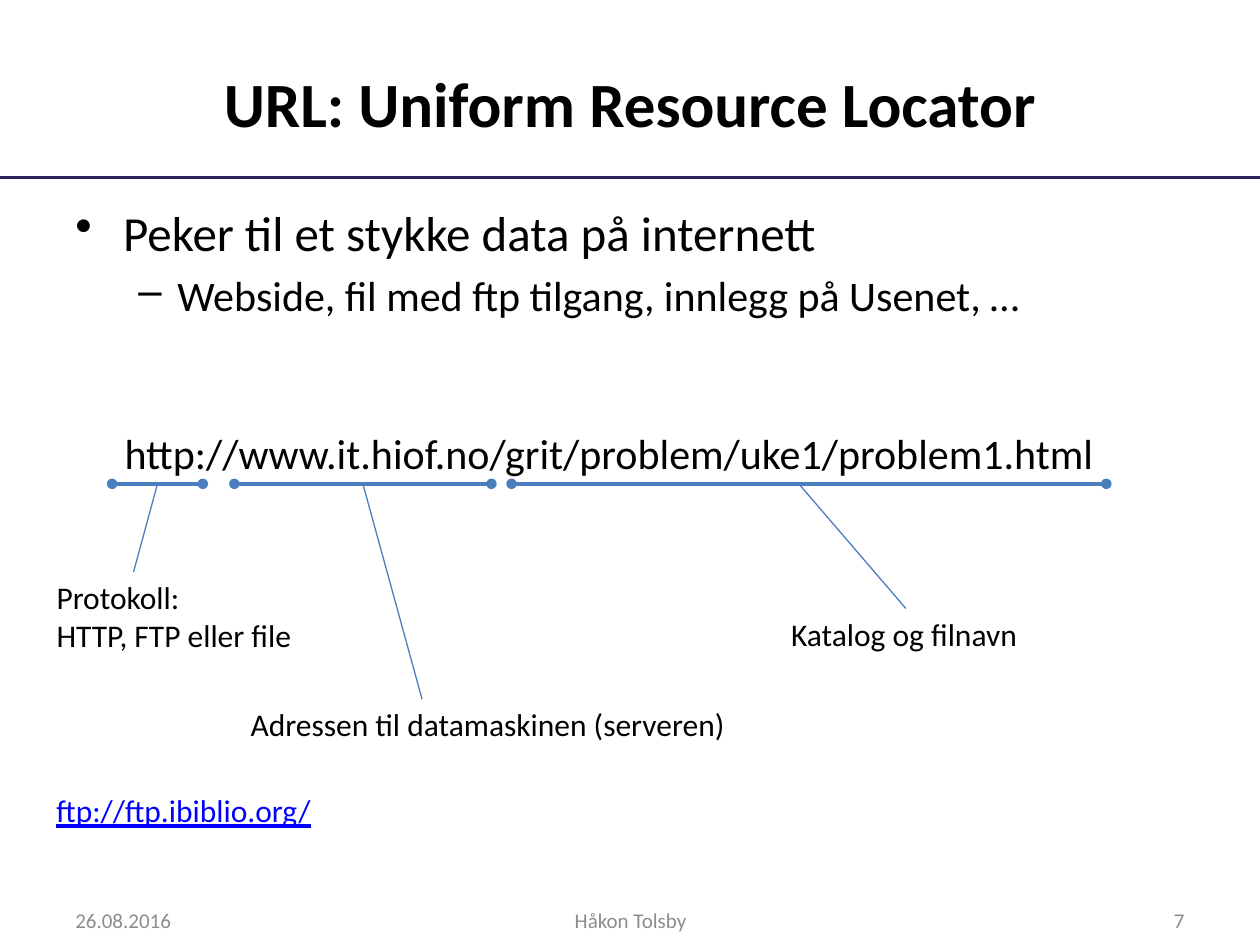
from dataclasses import dataclass

import pptx
import pptx.dml.color
import pptx.enum.shapes
import pptx.enum.text
import pptx.oxml.ns
import pptx.slide
import pptx.text.text
import pptx.util
from lxml import etree
from pptx.util import Inches

COLORS = {
    "text": "000000",
    "footer": "8C8C8C",
    "link": "0000FF",
    "rule": "28235D",
    "marker": "4B7EBC",
}
ALIGN = pptx.enum.text.PP_ALIGN
ANCHOR = pptx.enum.text.MSO_ANCHOR
URL_LINE_Y = 3.84


@dataclass
class Label:
    text: str
    left: float
    top: float
    width: float
    height: float
    size: float = 18
    color: str = "text"
    align: ALIGN = ALIGN.LEFT
    anchor: ANCHOR = ANCHOR.TOP
    bold: bool = False
    underline: bool = False
    wrap: bool = True


@dataclass
class Bullet:
    text: str
    symbol: str
    size: float
    margin: float
    hanging: float
    space_before: float


@dataclass
class UrlPart:
    start: float
    end: float
    label_x: float
    label_y: float


LABELS = [
    Label("URL: Uniform Resource Locator", 0.5, 0.3, 9, 1.03, 36,
          align=ALIGN.CENTER, anchor=ANCHOR.MIDDLE, bold=True),
    Label("http://www.it.hiof.no/grit/problem/uke1/problem1.html",
          0.89, 3.34, 8.27, 0.5, 24),
    Label("Protokoll:\nHTTP, FTP eller file", 0.35, 4.54, 2.09, 0.71, wrap=False),
    Label("Adressen til datamaskinen (serveren)", 1.89, 5.55, 4.01, 0.4, wrap=False),
    Label("Katalog og filnavn", 6.18, 4.83, 2.02, 0.4, wrap=False),
    Label("ftp://ftp.ibiblio.org/", 0.35, 6.23, 2.53, 0.4,
          color="link", underline=True),
    # Footer
    Label("26.08.2016", 0.5, 7.1, 2.33, 0.4, 12, "footer", anchor=ANCHOR.MIDDLE),
    Label("Håkon Tolsby", 3.42, 7.1, 3.17, 0.4, 12, "footer",
          ALIGN.CENTER, ANCHOR.MIDDLE),
    Label("7", 7.17, 7.1, 2.33, 0.4, 12, "footer", ALIGN.RIGHT, ANCHOR.MIDDLE),
]
BULLETS = [
    Bullet("Peker til et stykke data på internett", "•", 28, 0.38, 0.38, 0),
    Bullet("Webside, fil med ftp tilgang, innlegg på Usenet, …", "–",
           24, 0.81, 0.31, 4.8),
]
URL_PARTS = [
    UrlPart(0.89, 1.61, 1.06, 4.54),
    UrlPart(1.86, 3.9, 3.35, 5.55),
    UrlPart(4.06, 8.78, 7.19, 4.83),
]


def rgb(name: str) -> pptx.dml.color.RGBColor:
    return pptx.dml.color.RGBColor.from_string(COLORS[name])


def set_font(paragraph: pptx.text.text._Paragraph, size: float, color: str) -> None:
    paragraph.font.name = "Calibri"
    paragraph.font.size = pptx.util.Pt(size)
    paragraph.font.color.rgb = rgb(color)


def add_label(slide: pptx.slide.Slide, label: Label) -> None:
    shape = slide.shapes.add_textbox(Inches(label.left), Inches(label.top),
                                     Inches(label.width), Inches(label.height))
    frame = shape.text_frame
    frame.word_wrap = label.wrap
    frame.vertical_anchor = label.anchor
    frame.text = label.text
    for paragraph in frame.paragraphs:
        paragraph.alignment = label.align
        set_font(paragraph, label.size, label.color)
        paragraph.font.bold = label.bold
        paragraph.font.underline = label.underline


def add_bullets(slide: pptx.slide.Slide, bullets: list[Bullet]) -> None:
    shape = slide.shapes.add_textbox(Inches(0.5), Inches(1.56), Inches(9), Inches(1.09))
    frame = shape.text_frame
    frame.word_wrap = True
    frame.text = "\n".join(bullet.text for bullet in bullets)
    for level, (paragraph, bullet) in enumerate(zip(frame.paragraphs, bullets)):
        paragraph.level = level
        paragraph.space_before = pptx.util.Pt(bullet.space_before)
        properties = paragraph._p.get_or_add_pPr()
        properties.set("marL", str(Inches(bullet.margin)))
        properties.set("indent", str(-Inches(bullet.hanging)))
        etree.SubElement(properties, pptx.oxml.ns.qn("a:buChar"), char=bullet.symbol)
        set_font(paragraph, bullet.size, "text")


def add_line(slide: pptx.slide.Slide, start: tuple[float, float],
             end: tuple[float, float], color: str, width: float,
             dots: bool = False) -> None:
    connector = slide.shapes.add_connector(
        pptx.enum.shapes.MSO_CONNECTOR.STRAIGHT,
        Inches(start[0]), Inches(start[1]), Inches(end[0]), Inches(end[1]))
    connector.line.color.rgb = rgb(color)
    connector.line.width = pptx.util.Pt(width)
    if dots:
        line = connector.line._get_or_add_ln()
        for tag in ("a:headEnd", "a:tailEnd"):
            etree.SubElement(line, pptx.oxml.ns.qn(tag), type="oval")
    etree.SubElement(connector._element.spPr, pptx.oxml.ns.qn("a:effectLst"))


def main() -> None:
    presentation = pptx.Presentation()
    presentation.slide_width = Inches(10)
    presentation.slide_height = Inches(7.5)
    slide = presentation.slides.add_slide(presentation.slide_layouts[6])

    # Rule below the title
    add_line(slide, (0, 1.41), (10, 1.41), "rule", 2)

    # Text
    add_bullets(slide, BULLETS)
    for label in LABELS:
        add_label(slide, label)

    # Underlined URL parts, each with a leader from its middle to its label
    for part in URL_PARTS:
        middle = (part.start + part.end) / 2
        add_line(slide, (part.start, URL_LINE_Y), (part.end, URL_LINE_Y),
                 "marker", 2, dots=True)
        # The last leader starts slightly left of the middle
        leader_x = min(middle, 6.34)
        add_line(slide, (leader_x, URL_LINE_Y), (part.label_x, part.label_y),
                 "marker", 0.75)

    presentation.save("out.pptx")


if __name__ == "__main__":
    main()
